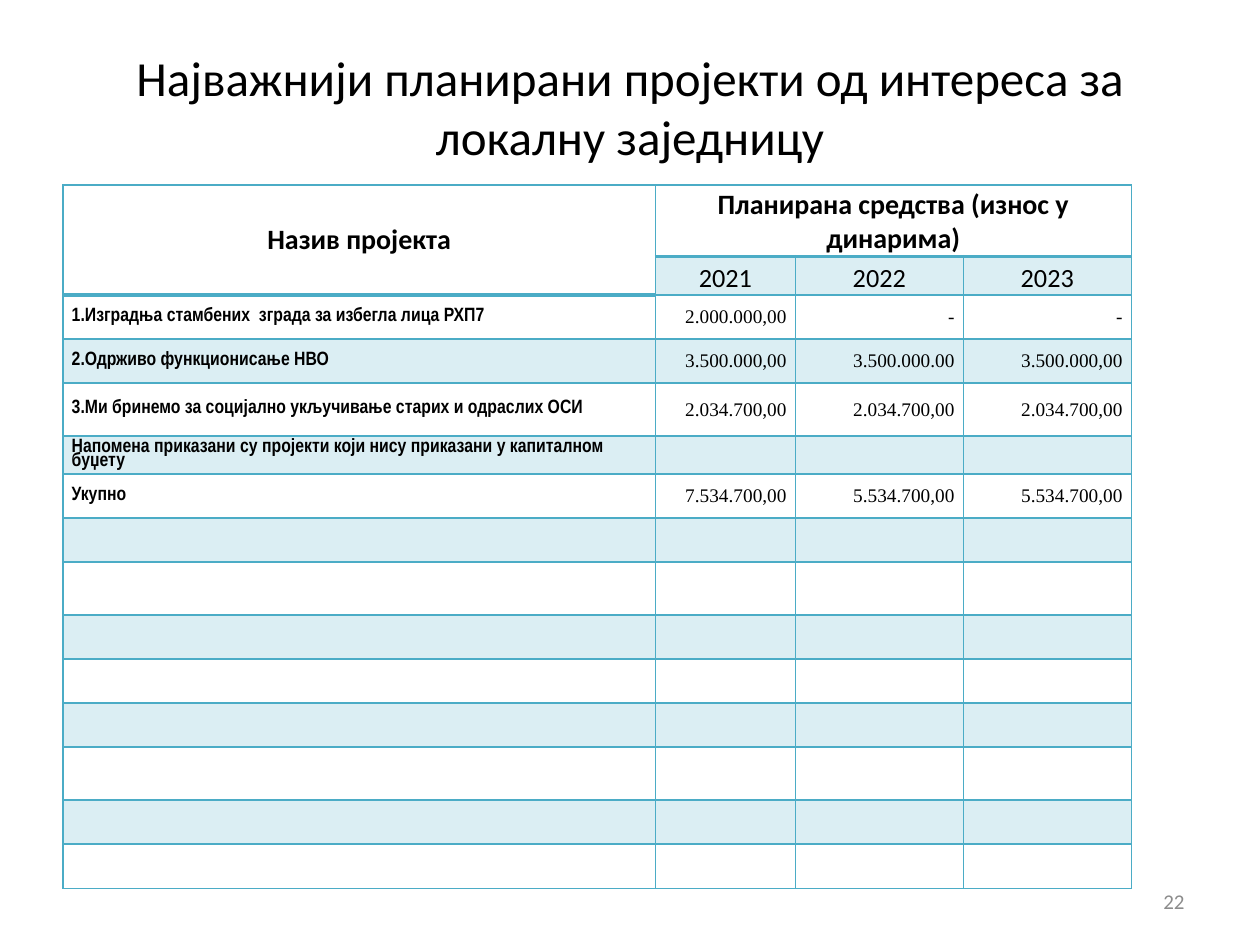
from pptx import Presentation
from pptx.dml.color import RGBColor
from pptx.enum.text import MSO_ANCHOR as Anchor, PP_ALIGN as Align
from pptx.oxml.ns import qn
from pptx.util import Pt
from lxml.etree import SubElement

TEAL = "4BACC6"
COLUMN_WIDTHS = [338.5, 80, 96, 96]
YEARS = ["2021", "2022", "2023"]
NOTE = "Напомена приказани су пројекти који нису приказани у капиталном буџету"
PROJECTS = [
    ["1.Изградња стамбених  зграда за избегла лица РХП7", "2.000.000,00", "-", "-"],
    ["2.Одрживо функционисање НВО", "3.500.000,00", "3.500.000.00", "3.500.000,00"],
    ["3.Ми бринемо за социјално укључивање старих и одраслих ОСИ"] + ["2.034.700,00"] * 3,
    [NOTE, "", "", ""],
    ["Укупно", "7.534.700,00", "5.534.700,00", "5.534.700,00"],
]
EMPTY_ROWS = 8


def color(value):
    """Turn a hex string into a colour."""
    return RGBColor.from_string(value)


def write(frame, text, size, font="Calibri", fill="000000", bold=False,
          align=Align.CENTER, spacing=None):
    """Write one formatted paragraph into a text frame."""
    paragraph = frame.paragraphs[0]
    paragraph.alignment = align
    if spacing:
        paragraph.line_spacing = spacing
    run = paragraph.add_run()
    run.text = text
    run.font.size, run.font.name, run.font.bold = Pt(size), font, bold
    run.font.color.rgb = color(fill)


def add_text(slide, box, text, **style):
    """Add a vertically centred text box."""
    shape = slide.shapes.add_textbox(*map(Pt, box))
    shape.text_frame.word_wrap = True
    shape.text_frame.vertical_anchor = Anchor.MIDDLE
    write(shape.text_frame, text, **style)


def draw_borders(cell, top, bottom):
    """Draw the four borders of a cell with the given top and bottom widths."""
    properties = cell._tc.get_or_add_tcPr()
    for side, width in zip("LRTB", (1, 1, top, bottom)):
        line = SubElement(properties, qn(f"a:ln{side}"), w=str(Pt(width)))
        solid = SubElement(line, qn("a:solidFill"))
        SubElement(solid, qn("a:srgbClr"), val=TEAL)


def fill_cell(cell, tinted):
    """Give a cell a light tint or no fill."""
    if not tinted:
        cell.fill.background()
        return
    cell.fill.solid()
    cell.fill.fore_color.rgb = color(TEAL)
    tint = cell._tc.tcPr.find(qn("a:solidFill")).find(qn("a:srgbClr"))
    SubElement(tint, qn("a:alpha"), val="20000")


def format_cell(cell, row, column):
    """Set the margins, anchor, borders and banding of a cell."""
    cell.margin_left = cell.margin_right = Pt(5)
    cell.margin_top = cell.margin_bottom = 0
    in_header = row < 2 and column > 0
    cell.vertical_anchor = Anchor.BOTTOM if in_header else Anchor.MIDDLE
    thick_top = row == (1 if column else 2)
    thick_bottom = row == 0 or (row == 1 and column == 0)
    draw_borders(cell, 2 if thick_top else 1, 2 if thick_bottom else 1)
    fill_cell(cell, row % 2 == 1 and (row > 1 or column > 0))


def add_project_table(slide, box):
    """Add the table of projects and their planned yearly funds."""
    body = PROJECTS + [[""] * 4] * EMPTY_ROWS
    heights = [41, 22] + [15 if cells[0] == NOTE else 30.2 if index % 4 == 2 else 25.2
                          for index, cells in enumerate(body)]
    table = slide.shapes.add_table(len(heights), 4, *map(Pt, box)).table
    table.first_row = table.horz_banding = False
    for column, width in zip(table.columns, COLUMN_WIDTHS):
        column.width = Pt(width)
    for row, height in enumerate(heights):
        table.rows[row].height = Pt(height)
        for column in range(4):
            format_cell(table.cell(row, column), row, column)

    table.cell(0, 0).merge(table.cell(1, 0))
    table.cell(0, 1).merge(table.cell(0, 3))
    write(table.cell(0, 0).text_frame, "Назив пројекта", 16, bold=True)
    write(table.cell(0, 1).text_frame, "Планирана средства (износ у динарима)", 16, bold=True)
    for column, year in enumerate(YEARS, 1):
        write(table.cell(1, column).text_frame, year, 15)
    for row, (name, *amounts) in enumerate(body, 2):
        write(table.cell(row, 0).text_frame, name, 11, font="Arial Narrow", bold=True,
              align=Align.LEFT, spacing=0.8)
        for column, amount in enumerate(amounts, 1):
            write(table.cell(row, column).text_frame, amount, 11,
                  font="Times New Roman", align=Align.RIGHT)


def main():
    """Build and save the presentation."""
    presentation = Presentation()
    presentation.slide_width, presentation.slide_height = Pt(720), Pt(540)
    slide = presentation.slides.add_slide(presentation.slide_layouts[6])
    add_text(slide, (36, 21.6, 648, 78.5),
             "Најважнији планирани пројекти од интереса за локалну заједницу", size=28)
    add_project_table(slide, (36, 105.6, 610.5, 400))
    add_text(slide, (516, 500.5, 168, 28.8), "22", size=12, fill="8C8C8C", align=Align.RIGHT)
    presentation.save("out.pptx")


if __name__ == "__main__":
    main()
